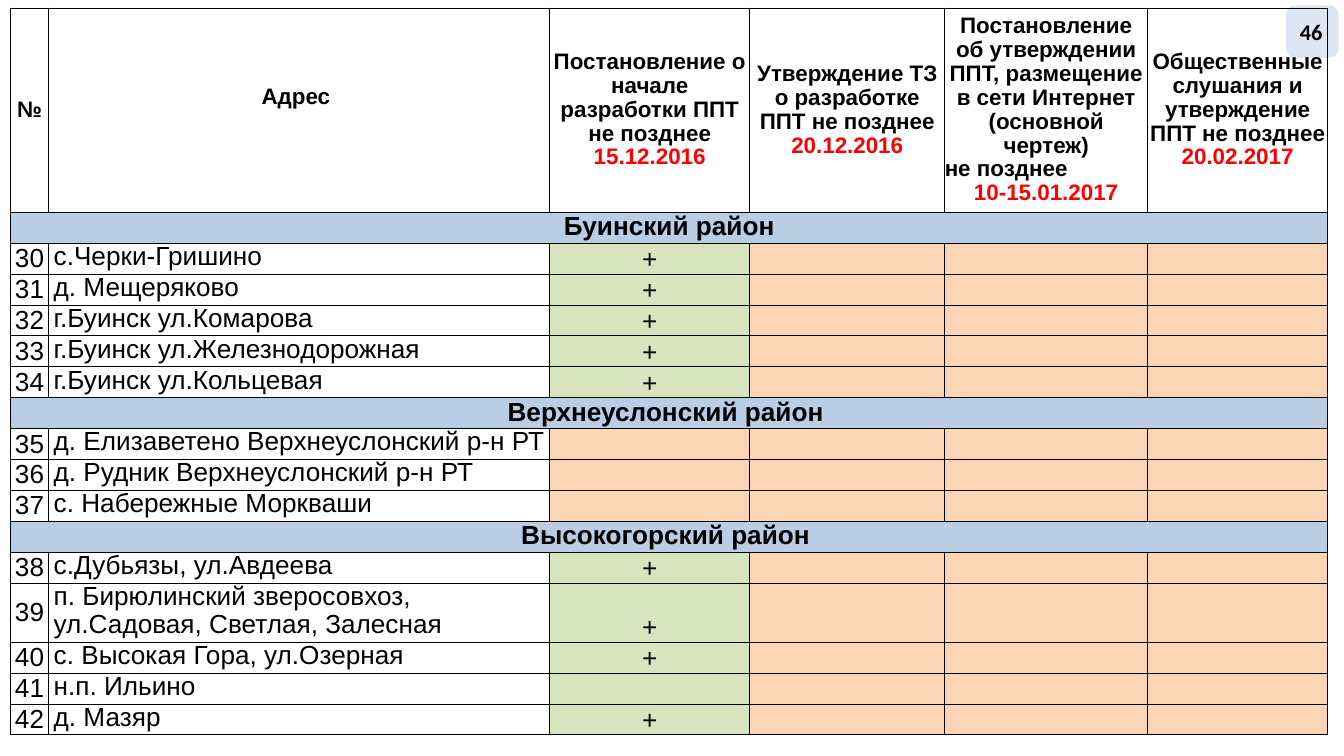
from lxml import etree
from pptx import Presentation
from pptx.dml.color import RGBColor
from pptx.enum.shapes import MSO_SHAPE
from pptx.enum.text import MSO_ANCHOR, PP_ALIGN
from pptx.oxml.ns import qn
from pptx.util import Inches, Pt

LEFT, CENTER = PP_ALIGN.LEFT, PP_ALIGN.CENTER
TOP, MIDDLE, BOTTOM = MSO_ANCHOR.TOP, MSO_ANCHOR.MIDDLE, MSO_ANCHOR.BOTTOM

BLACK = RGBColor(0x00, 0x00, 0x00)
RED = RGBColor(0xFF, 0x00, 0x00)
WHITE = RGBColor(0xFF, 0xFF, 0xFF)
BLUE = RGBColor(0xB9, 0xCD, 0xE5)
GREEN = RGBColor(0xD7, 0xE4, 0xBD)
ORANGE = RGBColor(0xFC, 0xD5, 0xB5)
BADGE = RGBColor(0xDD, 0xE7, 0xF3)

# Content: each header is a list of paragraphs (alignment, text, deadline)
PAGE_NUMBER = "46"
HEADERS = [
    [(CENTER, "№", "")],
    [(CENTER, "Адрес ", "")],
    [(CENTER, "Постановление о начале разработки ППТ не позднее ", "15.12.2016")],
    [(CENTER, "Утверждение ТЗ о разработке ППТ не позднее ", "20.12.2016")],
    [(CENTER, "Постановление об утверждении ППТ, размещение в сети Интернет "
              "(основной чертеж)", ""),
     (LEFT, "не позднее", ""),
     (CENTER, "", "10-15.01.2017")],
    [(CENTER, "Общественные слушания и утверждение ППТ не позднее ", "20.02.2017")],
]
# District, then its places: address, mark, colour of the mark cell
FIRST_NUMBER = 30
DISTRICTS = [
    ("Буинский район", [
        ("с.Черки-Гришино", "+", GREEN),
        ("д. Мещеряково", "+", GREEN),
        ("г.Буинск ул.Комарова", "+", GREEN),
        ("г.Буинск ул.Железнодорожная", "+", GREEN),
        ("г.Буинск ул.Кольцевая", "+", GREEN),
    ]),
    ("Верхнеуслонский район ", [
        ("д. Елизаветено Верхнеуслонский р-н РТ", "", ORANGE),
        ("д. Рудник Верхнеуслонский р-н РТ", "", ORANGE),
        ("с. Набережные Моркваши", "", ORANGE),
    ]),
    ("Высокогорский район ", [
        ("с.Дубьязы, ул.Авдеева", "+", GREEN),
        ("п. Бирюлинский зверосовхоз, ул.Садовая, Светлая, Залесная", "+", GREEN),
        ("с. Высокая Гора, ул.Озерная", "+", GREEN),
        ("н.п. Ильино", "", GREEN),
        ("д. Мазяр", "+", GREEN),
    ]),
]
COLUMN_WIDTHS = [0.28, 3.73, 1.49, 1.45, 1.51, 1.34]
HEADER_HEIGHT, ROW_HEIGHT, TALL_HEIGHT = 1.52, 0.23, 0.44
LONG_ADDRESS = 40  # characters that fit on one line

# Cell formats: margins are left, top, right, bottom
THIN = (0.01, 0.01, 0.01, 0)
HEADER = {"size": 12, "bold": True, "anchor": MIDDLE, "margins": (0, 0, 0, 0)}
ADDRESS_HEADER = {**HEADER, "margins": (0, 0, 0, 0.19)}
DISTRICT = {"size": 14, "bold": True, "anchor": TOP, "margins": THIN}
NUMBER = {"size": 14, "bold": False, "anchor": MIDDLE, "margins": THIN}
ADDRESS = {"size": 14, "bold": False, "anchor": TOP, "margins": (0.04, 0, 0, 0)}
MARK = {"size": 14, "bold": False, "anchor": BOTTOM, "margins": THIN}
EMPTY = {**MARK, "size": 10}


def add_run(paragraph, text, size, bold, color, name="Arial"):
    run = paragraph.add_run()
    run.text = text
    run.font.color.rgb = color
    values = {"size": Pt(size), "bold": bold, "name": name}
    for attribute, value in values.items():
        setattr(run.font, attribute, value)


def add_borders(cell):
    properties = cell._tc.get_or_add_tcPr()
    for side in ("a:lnL", "a:lnR", "a:lnT", "a:lnB"):
        line = etree.SubElement(properties, qn(side), w=str(Pt(0.5)))
        fill = etree.SubElement(line, qn("a:solidFill"))
        etree.SubElement(fill, qn("a:srgbClr"), val=str(BLACK))


def fill_cell(cell, paragraphs, style, color=None):
    add_borders(cell)
    if color is None:
        cell.fill.background()
    else:
        cell.fill.solid()
        cell.fill.fore_color.rgb = color
    cell.vertical_anchor = style["anchor"]
    for side, margin in zip(("left", "top", "right", "bottom"), style["margins"]):
        setattr(cell, f"margin_{side}", Inches(margin))
    frame = cell.text_frame
    for index, (alignment, text, deadline) in enumerate(paragraphs):
        paragraph = frame.add_paragraph() if index else frame.paragraphs[0]
        paragraph.alignment = alignment
        paragraph.line_spacing = 0.95
        for part, part_color in ((text, BLACK), (deadline, RED)):
            if part:
                add_run(paragraph, part, style["size"], style["bold"], part_color)
        if not text and not deadline:
            # An empty cell keeps the row low only with its own text size
            end = etree.SubElement(paragraph._p, qn("a:endParaRPr"),
                                   sz=str(style["size"] * 100))
            etree.SubElement(end, qn("a:latin"), typeface="Arial")


presentation = Presentation()
presentation.slide_width = Inches(10)
presentation.slide_height = presentation.slide_width * 9 // 16
slide = presentation.slides.add_slide(presentation.slide_layouts[6])

# Page number badge, behind the table
badge = slide.shapes.add_shape(MSO_SHAPE.ROUNDED_RECTANGLE, Inches(9.57),
                               Inches(0.04), Inches(0.39), Inches(0.39))
badge.shadow.inherit = False
badge.fill.solid()
badge.fill.fore_color.rgb = BADGE
badge.line.fill.background()
frame = badge.text_frame
frame.margin_left, frame.margin_right = Inches(0.08), Inches(0.1)
frame.vertical_anchor = MIDDLE
frame.word_wrap = False
frame.paragraphs[0].alignment = CENTER
add_run(frame.paragraphs[0], PAGE_NUMBER, 12, True, BLACK, "Calibri")

# Table grid
heights = [HEADER_HEIGHT]
for _, places in DISTRICTS:
    heights.append(ROW_HEIGHT)
    heights += [TALL_HEIGHT if len(address) > LONG_ADDRESS else ROW_HEIGHT
                for address, _, _ in places]
table = slide.shapes.add_table(
    len(heights), len(COLUMN_WIDTHS), Inches(0.08), Inches(0.06),
    Inches(sum(COLUMN_WIDTHS)), Inches(sum(heights))).table
table.first_row = False
table.horz_banding = False
for column, width in zip(table.columns, COLUMN_WIDTHS):
    column.width = Inches(width)
for row, height in zip(table.rows, heights):
    row.height = Inches(height)

# Header row
for index, paragraphs in enumerate(HEADERS):
    style = ADDRESS_HEADER if index == 1 else HEADER
    fill_cell(table.cell(0, index), paragraphs, style)

# Districts and their places
row_index, number = 1, FIRST_NUMBER
last_column = len(COLUMN_WIDTHS) - 1
for district, places in DISTRICTS:
    for index in range(len(COLUMN_WIDTHS)):
        text = "" if index else district
        fill_cell(table.cell(row_index, index), [(CENTER, text, "")], DISTRICT, BLUE)
    table.cell(row_index, 0).merge(table.cell(row_index, last_column))
    row_index += 1
    for address, mark, mark_color in places:
        cells = [
            (CENTER, str(number), NUMBER, WHITE),
            (LEFT, address, ADDRESS, WHITE),
            (CENTER, mark, MARK if mark else EMPTY, mark_color),
        ] + [(CENTER, "", EMPTY, ORANGE)] * 3
        for index, (alignment, text, style, color) in enumerate(cells):
            fill_cell(table.cell(row_index, index), [(alignment, text, "")], style, color)
        row_index += 1
        number += 1

presentation.save("out.pptx")
